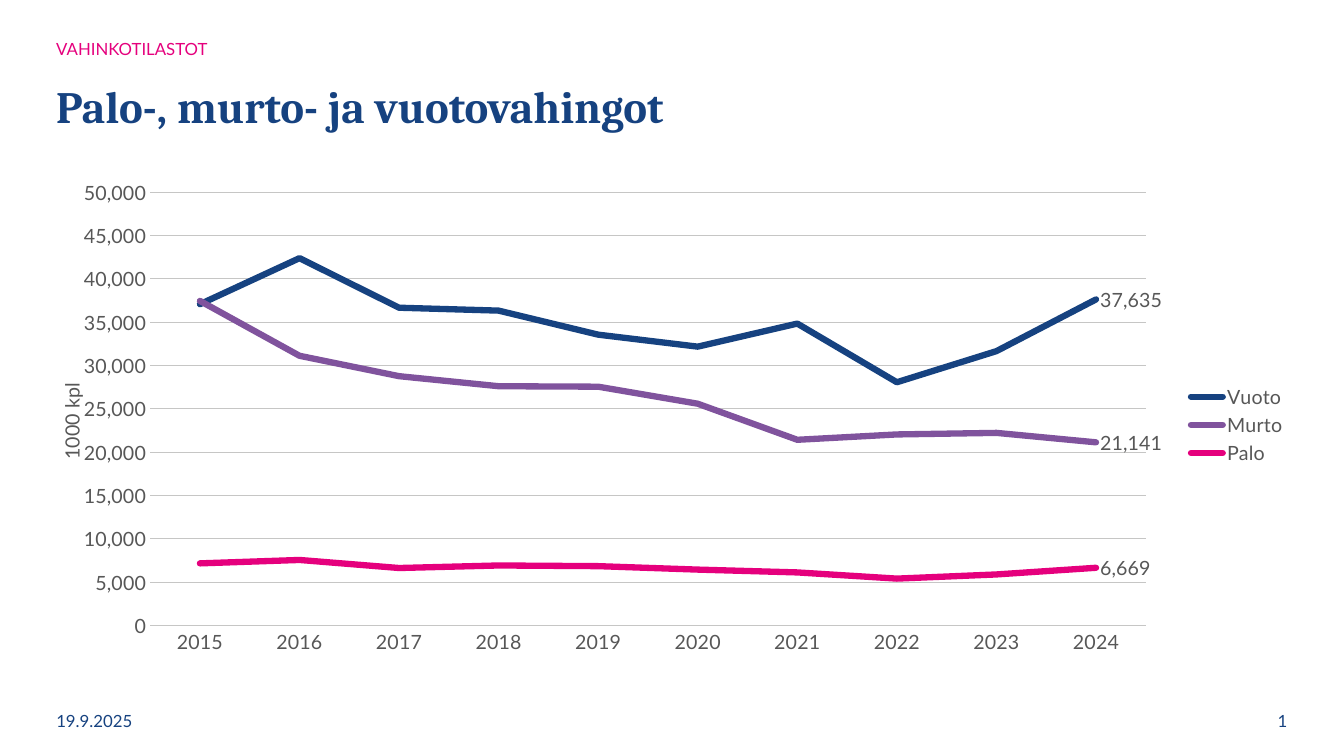
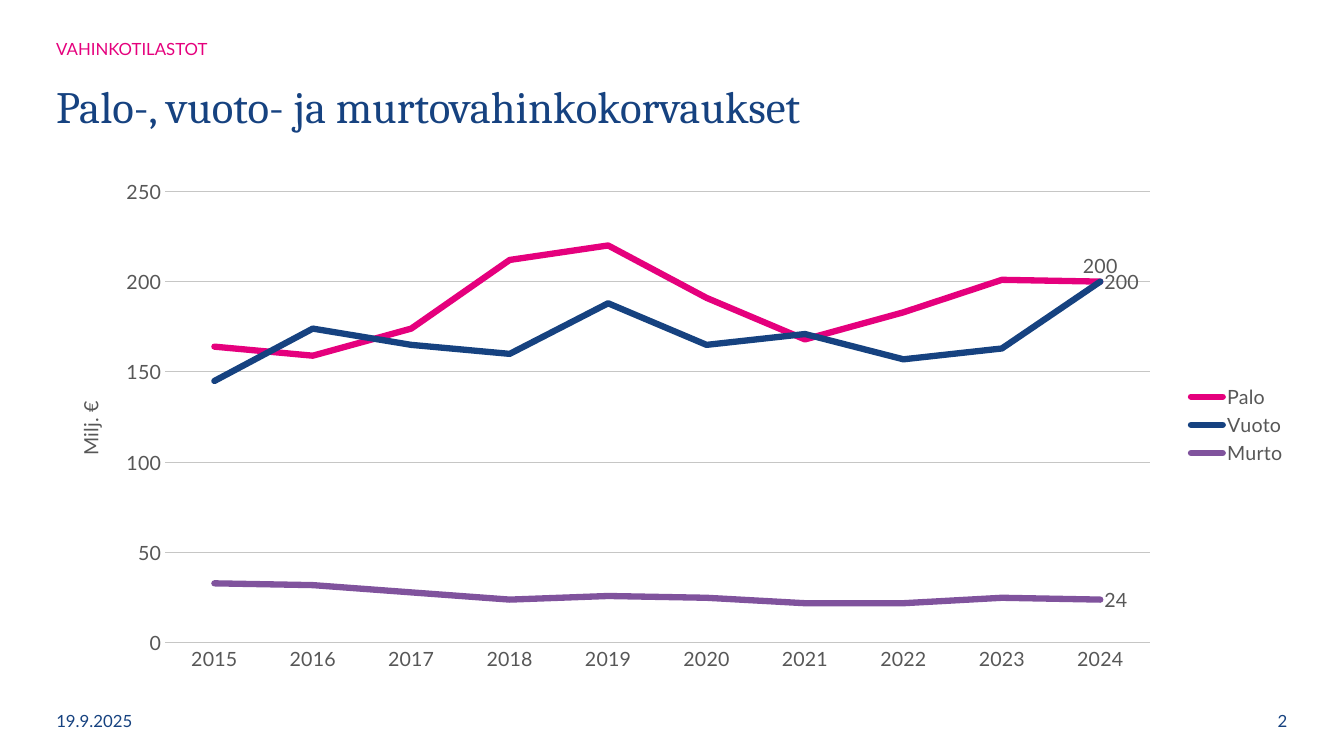
from lxml.etree import SubElement
from pptx import Presentation
from pptx.chart.data import CategoryChartData
from pptx.dml.color import RGBColor
from pptx.enum.chart import XL_CHART_TYPE, XL_LABEL_POSITION, XL_LEGEND_POSITION, XL_TICK_MARK
from pptx.enum.text import MSO_ANCHOR, PP_ALIGN
from pptx.oxml import parse_xml
from pptx.oxml.ns import nsdecls, qn
from pptx.util import Pt

COLORS = {"blue": "164280", "pink": "E5007D", "purple": "80539D",
          "text": "575757", "grid": "C6C6C5"}
SERIES_COLORS = {"Vuoto": "blue", "Murto": "purple", "Palo": "pink"}
YEARS = [str(year) for year in range(2015, 2025)]
LEFT, FULL_W, TEXT_W = 33.12, 893.52, 832.32
FOOTER_TOP, FOOTER_W, FOOTER_H = 500.4, 84.96, 28.8


def rgb(name):
    return RGBColor.from_string(COLORS[name])


def set_layout(parent, index, **fractions):
    """Place a chart part by fractions of the chart area."""
    old = parent.find(qn("c:layout"))
    if old is not None:
        parent.remove(old)
    inner = '<c:layoutTarget val="inner"/>' if "w" in fractions else ""
    modes = '<c:xMode val="edge"/><c:yMode val="edge"/>'
    values = "".join(f'<c:{k} val="{v}"/>' for k, v in fractions.items())
    parent.insert(index, parse_xml(
        f'<c:layout {nsdecls("c")}><c:manualLayout>{inner}{modes}{values}'
        '</c:manualLayout></c:layout>'))


class Deck:
    body_font, title_font = "Lato", "Cambria"

    def __init__(self):
        self.prs = Presentation()
        self.prs.slide_width, self.prs.slide_height = Pt(960), Pt(540)
        self.s = None

    def style(self, font, size, color, name=None, bold=False):
        font.name, font.size, font.bold = name or self.body_font, Pt(size), bold
        font.color.rgb = rgb(color)

    def text(self, box, text, size=12, color="blue", name=None, bold=False,
             anchor=MSO_ANCHOR.MIDDLE, align=PP_ALIGN.LEFT, spacing=1.0):
        tf = self.s.shapes.add_textbox(*map(Pt, box)).text_frame
        tf.word_wrap, tf.vertical_anchor = True, anchor
        p = tf.paragraphs[0]
        p.text, p.alignment, p.line_spacing = text, align, spacing
        self.style(p.font, size, color, name, bold)
        return p

    def slide(self, title, bold=False):
        self.s = self.prs.slides.add_slide(self.prs.slide_layouts[6])
        # Heading
        self.text((LEFT, 20.88, TEXT_W, 15.84), "VAHINKOTILASTOT", color="pink",
                  anchor=MSO_ANCHOR.TOP, spacing=1.2)
        self.text((LEFT, 43.2, TEXT_W, 69.12), title, 32, name=self.title_font,
                  bold=bold, spacing=0.9)
        # Footer
        self.text((LEFT, FOOTER_TOP, FOOTER_W, FOOTER_H), "19.9.2025")
        p = self.text((LEFT + FULL_W - FOOTER_W, FOOTER_TOP, FOOTER_W, FOOTER_H), "",
                      align=PP_ALIGN.RIGHT)
        fld = SubElement(p._p, qn("a:fld"), type="slidenum",
                         id="{B6F15528-21DE-4FAA-801E-634DDDAF4B2B}")
        SubElement(fld, qn("a:rPr"), lang="fi-FI")
        SubElement(fld, qn("a:t")).text = str(len(self.prs.slides))

    def line_chart(self, series, unit, top, step, plot, unit_at, label_above=()):
        data = CategoryChartData(number_format="#,##0")
        data.categories = YEARS
        for name, values in series.items():
            data.add_series(name, values)
        chart = self.s.shapes.add_chart(
            XL_CHART_TYPE.LINE, Pt(LEFT), Pt(120.96), Pt(FULL_W), Pt(365.04), data).chart
        chart.has_title = False
        self.style(chart.font, 14, "text")
        set_layout(chart._chartSpace.chart.plotArea, 0, **plot)

        # Legend
        chart.has_legend = True
        chart.legend.position = XL_LEGEND_POSITION.RIGHT
        chart.legend.include_in_layout = False
        self.style(chart.legend.font, 14, "text")

        # Axes
        cat, val = chart.category_axis, chart.value_axis
        for axis in (cat, val):
            axis.major_tick_mark = axis.minor_tick_mark = XL_TICK_MARK.NONE
            self.style(axis.tick_labels.font, 14, "text")
        val.minimum_scale, val.maximum_scale, val.major_unit = 0, top, step
        val.format.line.fill.background()
        for line in (cat.format.line, val.major_gridlines.format.line):
            line.color.rgb, line.width = rgb("grid"), Pt(0.75)
        tf = val.axis_title.text_frame
        tf.text = unit
        tf._txBody.bodyPr.set("rot", "-5400000")
        tf._txBody.bodyPr.set("vert", "horz")
        self.style(tf.paragraphs[0].font, 14, "text")
        set_layout(val.axis_title._element, 1, **unit_at)

        # Lines, each labelled at its last point
        for ser in chart.plots[0].series:
            ser.smooth = False
            line = ser.format.line
            line.color.rgb, line.width = rgb(SERIES_COLORS[ser.name]), Pt(4.5)
            line._get_or_add_ln().set("cap", "rnd")
            ser.data_labels.show_value = False
            label = ser.points[len(YEARS) - 1].data_label
            self.style(label.font, 14, "text")
            label.position = (XL_LABEL_POSITION.ABOVE if ser.name in label_above
                              else XL_LABEL_POSITION.RIGHT)


def main():
    deck = Deck()

    # Number of claims
    deck.slide("Palo-, murto- ja vuotovahingot", bold=True)
    deck.line_chart(
        {"Vuoto": (37082, 42399, 36680, 36345, 33568, 32186, 34846, 28081, 31671, 37635),
         "Murto": (37466, 31135, 28781, 27623, 27566, 25604, 21436, 22054, 22234, 21141),
         "Palo": (7176, 7573, 6642, 6934, 6856, 6457, 6133, 5418, 5901, 6669)},
        "1000 kpl", 50000, 5000,
        plot=dict(x=0.083, y=0.045, w=0.796, h=0.848), unit_at=dict(x=0.006, y=0.41))

    # Claims paid
    deck.slide("Palo-, vuoto- ja murtovahinkokorvaukset")
    deck.line_chart(
        {"Palo": (164, 159, 174, 212, 220, 191, 168, 183, 201, 200),
         "Vuoto": (145, 174, 165, 160, 188, 165, 171, 157, 163, 200),
         "Murto": (33, 32, 28, 24, 26, 25, 22, 22, 25, 24)},
        "Milj. €", 250, 50,
        plot=dict(x=0.095, y=0.043, w=0.787, h=0.884), unit_at=dict(x=0.021, y=0.447),
        label_above=("Vuoto",))

    deck.prs.save("out.pptx")


if __name__ == "__main__":
    main()
